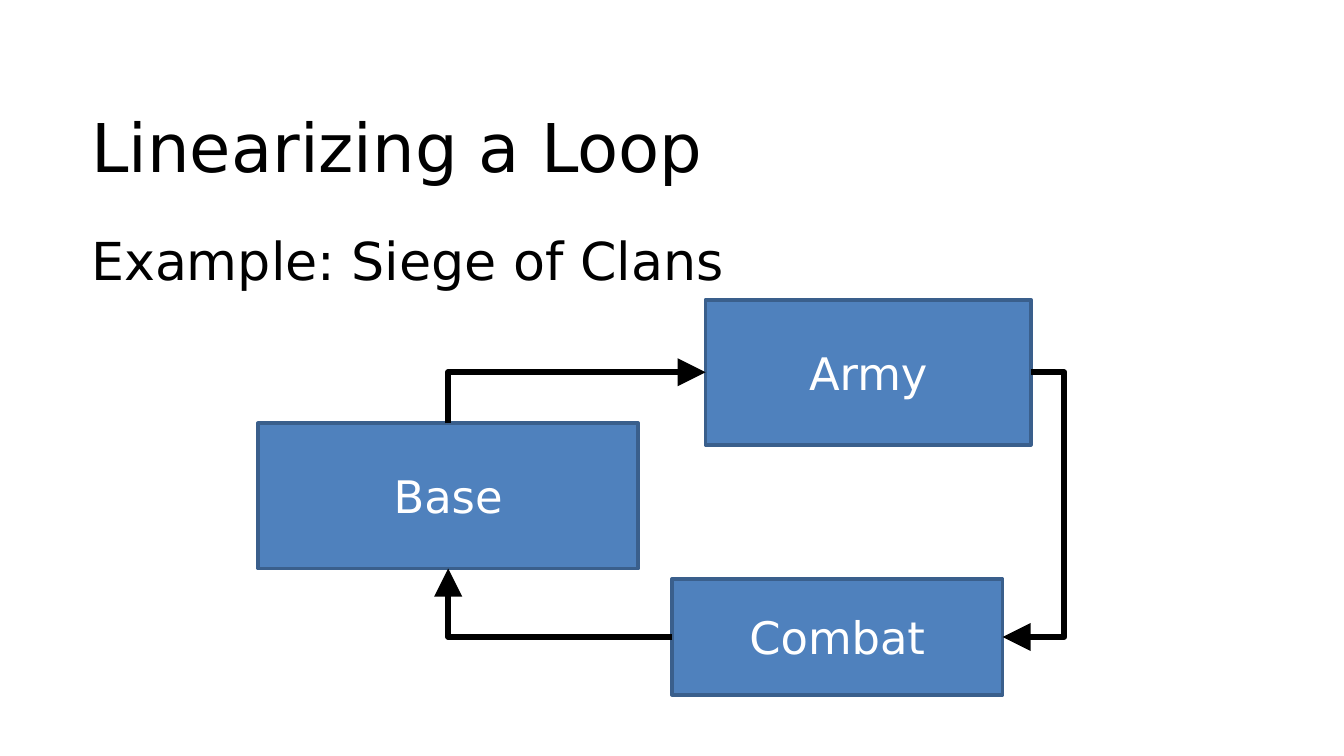
import pptx
import pptx.util
import pptx.dml.color
import pptx.enum.shapes
import pptx.enum.text
import pptx.oxml.ns

Inches, Pt = pptx.util.Inches, pptx.util.Pt
RGBColor = pptx.dml.color.RGBColor
ANCHOR, ALIGN = pptx.enum.text.MSO_ANCHOR, pptx.enum.text.PP_ALIGN
qn = pptx.oxml.ns.qn

BLACK = RGBColor(0x00, 0x00, 0x00)
WHITE = RGBColor(0xFF, 0xFF, 0xFF)
BLUE = RGBColor(0x4F, 0x81, 0xBD)
BLUE_EDGE = RGBColor(0x3A, 0x5F, 0x8C)
FONT = "DejaVu Sans"
TOP, LEFT, BOTTOM, RIGHT = range(4)  # connection sites of a rectangle


def add_text(shape, text, size, color, align, anchor):
    tf = shape.text_frame
    tf.word_wrap = True
    tf.auto_size = pptx.enum.text.MSO_AUTO_SIZE.NONE
    tf.vertical_anchor = anchor
    p = tf.paragraphs[0]
    p.alignment = align
    r = p.add_run()
    r.text = text
    r.font.name, r.font.size, r.font.color.rgb = FONT, Pt(size), color


def add_heading(s, x, y, w):
    # Title
    title = s.shapes.title
    title.left, title.top = Inches(x), Inches(y)
    title.width, title.height = Inches(w), Inches(0.85)
    add_text(title, "Linearizing a Loop", 36, BLACK, ALIGN.LEFT, ANCHOR.TOP)
    # Subtitle
    subtitle = s.shapes.add_textbox(Inches(x), Inches(y + 0.92), Inches(5.58), Inches(0.67))
    add_text(subtitle, "Example: Siege of Clans", 28, BLACK, ALIGN.LEFT, ANCHOR.TOP)


def add_stage(s, text, x, y, w, h):
    box = s.shapes.add_shape(pptx.enum.shapes.MSO_SHAPE.RECTANGLE,
                             Inches(x), Inches(y), Inches(w), Inches(h))
    box.shadow.inherit = False
    box.fill.solid()
    box.fill.fore_color.rgb = BLUE
    box.line.color.rgb, box.line.width = BLUE_EDGE, Pt(2)
    add_text(box, text, 24, WHITE, ALIGN.CENTER, ANCHOR.MIDDLE)
    return box


def add_child(parent, tag, **attributes):
    child = parent.makeelement(qn(tag), attributes)
    parent.append(child)
    return child


def add_arrow(s, start, start_site, end, end_site, preset, rotation=0, flips="", bend=None):
    c = s.shapes.add_connector(pptx.enum.shapes.MSO_CONNECTOR.ELBOW, 0, 0, 0, 0)
    c.begin_connect(start, start_site)
    c.end_connect(end, end_site)
    c.line.color.rgb, c.line.width = BLACK, Pt(3)
    # A quarter turn swaps width and height about the centre
    if rotation == 90:
        w, h = c.width, c.height
        c.left, c.top = c.left + (w - h) // 2, c.top + (h - w) // 2
        c.width, c.height = h, w
    sp_pr = c._element.spPr
    xfrm = sp_pr.find(qn("a:xfrm"))
    xfrm.set("rot", str(rotation * 60000))
    xfrm.set("flipH", str(int("h" in flips)))
    xfrm.set("flipV", str(int("v" in flips)))
    geom = sp_pr.find(qn("a:prstGeom"))
    geom.set("prst", preset)
    if bend is not None:
        guides = geom.find(qn("a:avLst"))
        if guides is None:
            guides = add_child(geom, "a:avLst")
        add_child(guides, "a:gd", name="adj1", fmla=f"val {round(bend * 100000)}")
    # Large arrowhead, no shadow
    add_child(sp_pr.find(qn("a:ln")), "a:tailEnd", type="triangle", w="lg", len="lg")
    add_child(sp_pr, "a:effectLst")


def add_loop(s, x, y):
    # Stages
    base = add_stage(s, "Base", x, y + 0.92, 2.83, 1.08)
    army = add_stage(s, "Army", x + 3.33, y, 2.42, 1.08)
    combat = add_stage(s, "Combat", x + 3.08, y + 2.08, 2.46, 0.86)
    # Arrows round the loop
    add_arrow(s, base, TOP, army, LEFT, "bentConnector2", 90, "hv")
    add_arrow(s, army, RIGHT, combat, RIGHT, "bentConnector3", 0, "h", -1.19)
    add_arrow(s, combat, LEFT, base, BOTTOM, "bentConnector2", 180)


def main():
    prs = pptx.Presentation()
    # Widescreen, 16:9
    prs.slide_width = Inches(10)
    prs.slide_height = prs.slide_width * 9 // 16
    s = prs.slides.add_slide(prs.slide_layouts.get_by_name("Title Only"))
    add_heading(s, 0.58, 0.73, 8.83)
    add_loop(s, 1.92, 2.23)
    prs.save("out.pptx")


if __name__ == "__main__":
    main()
